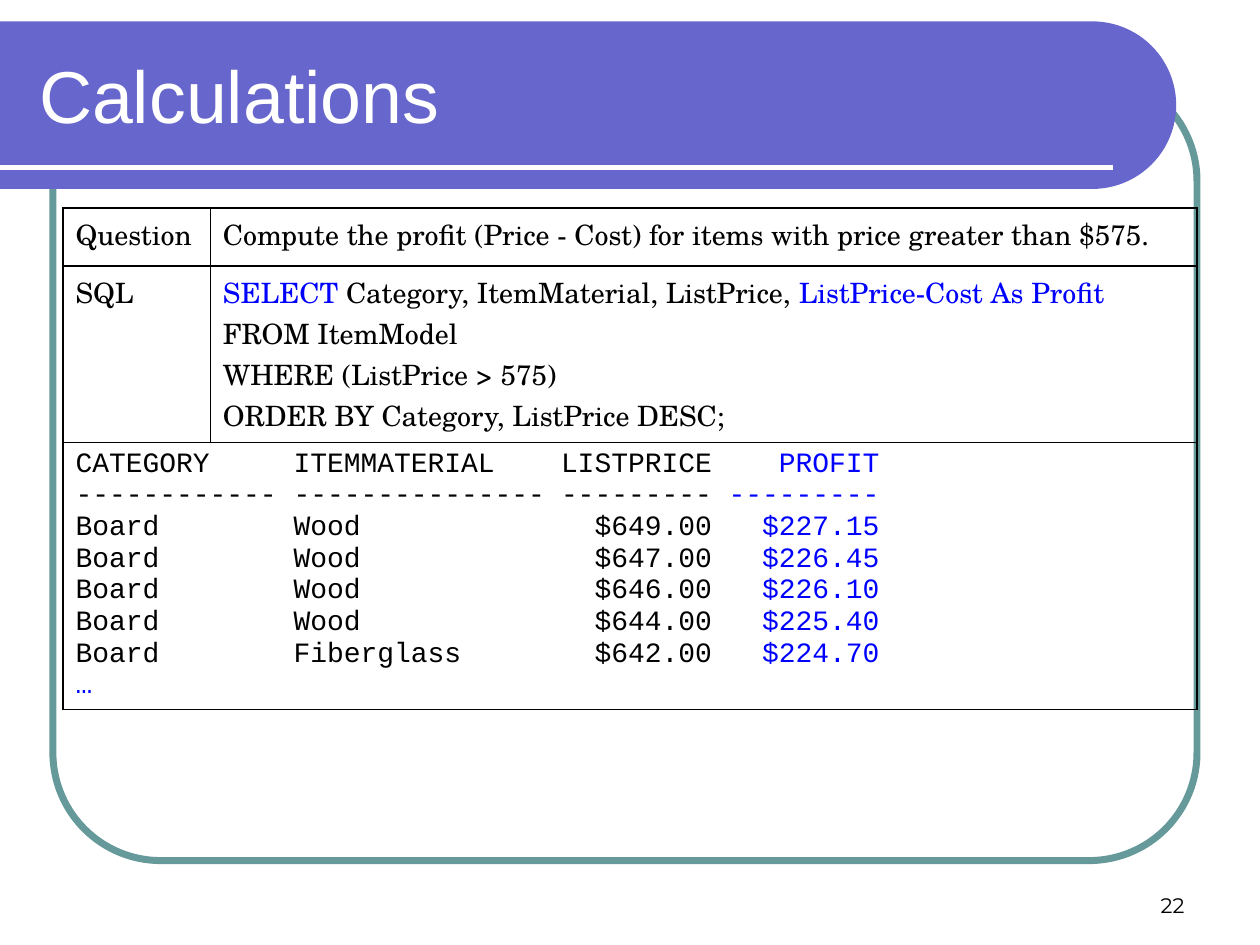
import math

from lxml import etree
from pptx import Presentation
from pptx.dml.color import RGBColor
from pptx.enum.shapes import MSO_CONNECTOR, MSO_SHAPE
from pptx.enum.text import MSO_ANCHOR, PP_ALIGN
from pptx.oxml.ns import qn
from pptx.util import Inches, Pt

LEFT, RIGHT = PP_ALIGN.LEFT, PP_ALIGN.RIGHT
MIDDLE, BOTTOM = MSO_ANCHOR.MIDDLE, MSO_ANCHOR.BOTTOM
ROUNDED, STRAIGHT = MSO_SHAPE.ROUNDED_RECTANGLE, MSO_CONNECTOR.STRAIGHT

COLORS = {"band": "6666CC", "frame": "669999", "white": "FFFFFF",
          "black": "000000", "highlight": "0000FF"}
SERIF, MONO = "TeX Gyre Schola", "Courier New"


def rgb(name):
    return RGBColor.from_string(COLORS[name])


def add_text(paragraph, text, font=SERIF, size=16, color="black", align=LEFT):
    paragraph.alignment = align
    paragraph.space_before = Pt(0)
    run = paragraph.add_run()
    run.text = text
    run.font.name = font
    run.font.size = Pt(size)
    run.font.color.rgb = rgb(color)


prs = Presentation()
prs.slide_width, prs.slide_height = Inches(10), Inches(7.5)
slide = prs.slides.add_slide(prs.slide_layouts[5])
shapes = slide.shapes

# Rounded frame
frame = shapes.add_shape(ROUNDED, Inches(0.42), Inches(0.58), Inches(9.08), Inches(6.25))
frame.adjustments[0] = 0.137
frame.shadow.inherit = False
frame.fill.background()
frame.line.color.rgb = rgb("frame")
frame.line.width = Pt(4)

# Title band with a semicircular right end
radius, center_x, center_y, steps = 0.665, 8.67, 0.835, 48
arc = []
for step in range(steps + 1):
    angle = math.pi * (step / steps - 0.5)
    arc.append((Inches(center_x + radius * math.cos(angle)),
                Inches(center_y + radius * math.sin(angle))))
outline = shapes.build_freeform(0, Inches(center_y - radius))
outline.add_line_segments(arc + [(0, Inches(center_y + radius))], close=True)
band = outline.convert_to_shape()
band.shadow.inherit = False
band.fill.solid()
band.fill.fore_color.rgb = rgb("band")
band.line.fill.background()

# White rule
rule = shapes.add_connector(STRAIGHT, 0, Inches(1.33), Inches(8.83), Inches(1.33))
rule.line.color.rgb = rgb("white")
rule.line.width = Pt(3)
etree.SubElement(rule._element.spPr, qn("a:effectLst"))

# Slide number
number = shapes.add_textbox(Inches(7.17), Inches(6.83), Inches(2.33), Inches(0.5)).text_frame
number.word_wrap = True
number.vertical_anchor = BOTTOM
add_text(number.paragraphs[0], "22", font="Montserrat", size=12, align=RIGHT)

# Title, brought in front of the band
title = shapes.title
title.left, title.top = Inches(0.21), Inches(0.25)
title.width, title.height = Inches(8.77), Inches(1)
title.text_frame.vertical_anchor = MIDDLE
add_text(title.text_frame.paragraphs[0], "Calculations", font="Arial", size=42, color="white")
shapes._spTree.append(title._element)

# Table grid
column_widths, row_heights = [1.17, 7.83], [0.46, 1.4, 2.12]
table = shapes.add_table(3, 2, Inches(0.5), Inches(1.65), Inches(sum(column_widths)),
                         Inches(sum(row_heights))).table
table.first_row = table.horz_banding = False
for column, width in zip(table.columns, column_widths):
    column.width = Inches(width)
for row, height in zip(table.rows, row_heights):
    row.height = Inches(height)
for cell in table.iter_cells():
    cell.fill.background()
    properties = cell._tc.get_or_add_tcPr()
    for position, side in enumerate(("lnL", "lnR", "lnT", "lnB")):
        border = etree.Element(qn(f"a:{side}"), w=str(Pt(1)))
        fill = etree.SubElement(border, qn("a:solidFill"))
        etree.SubElement(fill, qn("a:srgbClr"), val=COLORS["black"])
        properties.insert(position, border)
table.cell(2, 0).merge(table.cell(2, 1))

# Question and SQL
add_text(table.cell(0, 0).text_frame.paragraphs[0], "Question")
add_text(table.cell(0, 1).text_frame.paragraphs[0],
         "Compute the profit (Price - Cost) for items with price greater than $575.")
add_text(table.cell(1, 0).text_frame.paragraphs[0], "SQL")
query = table.cell(1, 1).text_frame
for text, color in [("SELECT", "highlight"),
                    (" Category, ItemMaterial, ListPrice, ", "black"),
                    ("ListPrice-Cost As Profit", "highlight")]:
    add_text(query.paragraphs[0], text, color=color)
for clause in ("FROM ItemModel", "WHERE (ListPrice > 575)",
               "ORDER BY Category, ListPrice DESC;"):
    add_text(query.add_paragraph(), clause)

# Query result, its columns set by tab stops
result_rows = [
    ("CATEGORY", "ITEMMATERIAL", "LISTPRICE", "PROFIT"),
    ("-" * 12, "-" * 15, "-" * 9, "-" * 9),
    ("Board", "Wood", "$649.00", "$227.15"),
    ("Board", "Wood", "$647.00", "$226.45"),
    ("Board", "Wood", "$646.00", "$226.10"),
    ("Board", "Wood", "$644.00", "$225.40"),
    ("Board", "Fiberglass", "$642.00", "$224.70"),
]
tab_stops = [(1.73, "l"), (5.05, "r"), (6.38, "r")]
result = table.cell(2, 0).text_frame
for index, (*plain, profit) in enumerate(result_rows):
    line = result.add_paragraph() if index else result.paragraphs[0]
    tabs = etree.SubElement(line._p.get_or_add_pPr(), qn("a:tabLst"))
    for position, align in tab_stops:
        etree.SubElement(tabs, qn("a:tab"), pos=str(Inches(position)), algn=align)
    add_text(line, "\t".join(plain) + "\t", font=MONO)
    add_text(line, profit, font=MONO, color="highlight")
add_text(result.add_paragraph(), "…", font=MONO, color="highlight")

prs.save("out.pptx")
